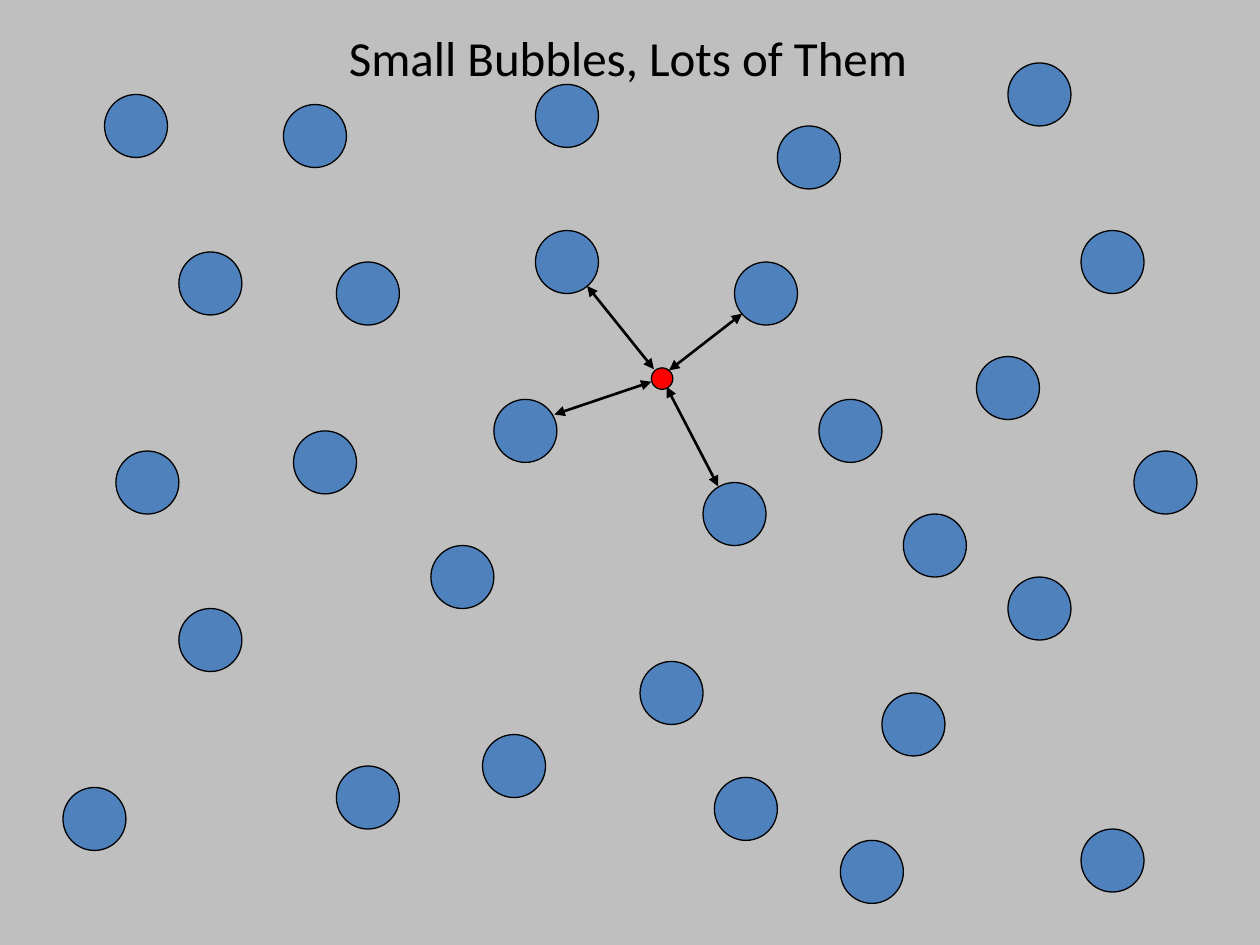
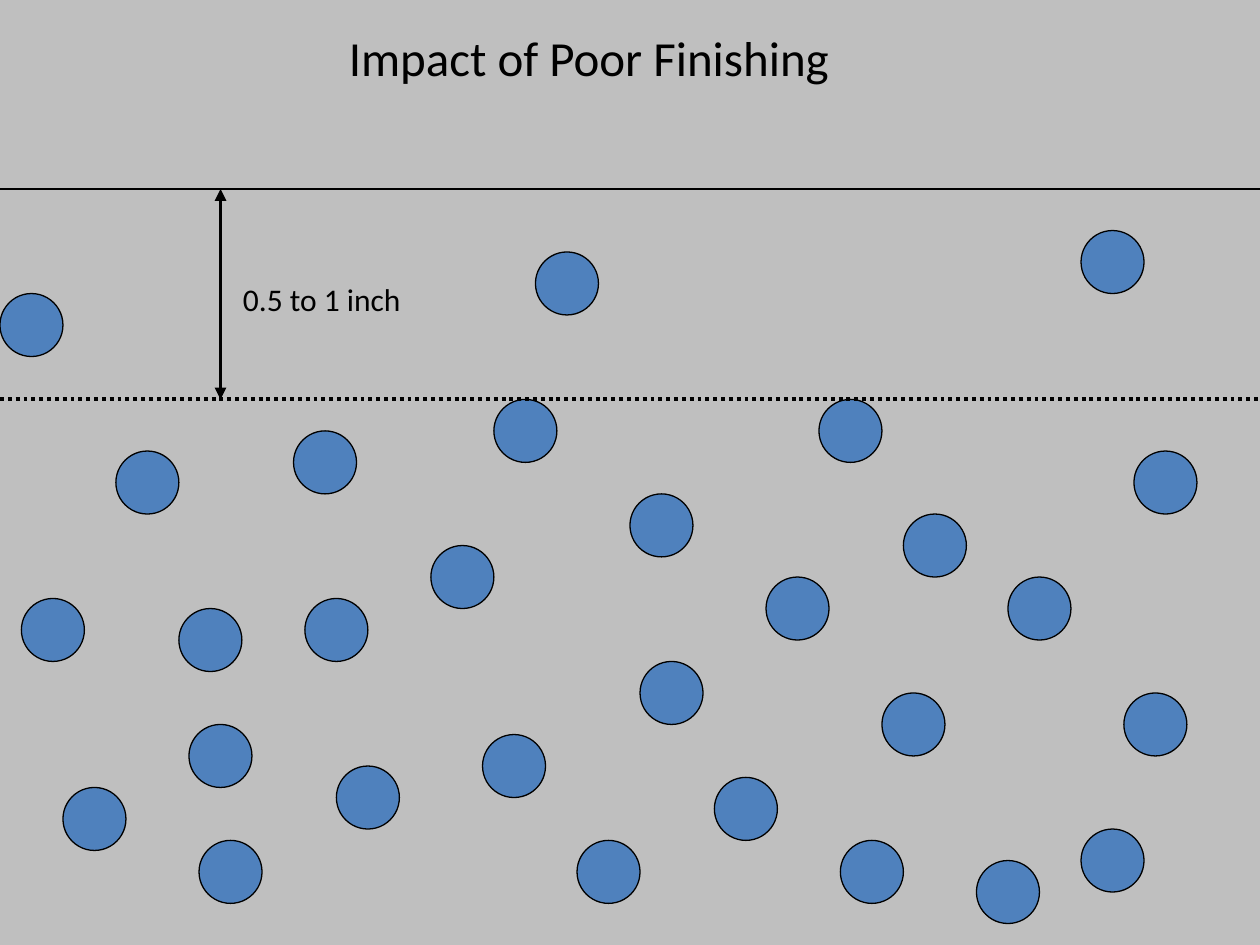
from dataclasses import dataclass

from lxml.etree import SubElement
from pptx import Presentation
from pptx.dml.color import RGBColor
from pptx.enum.dml import MSO_LINE
from pptx.enum.shapes import MSO_CONNECTOR, MSO_SHAPE
from pptx.enum.text import MSO_AUTO_SIZE, PP_ALIGN
from pptx.oxml.ns import qn
from pptx.presentation import Presentation as PresentationFile
from pptx.shapes.autoshape import Shape
from pptx.slide import Slide
from pptx.util import Inches, Pt


@dataclass(frozen=True)
class Theme:
    """Colours, font and sizes shared by the slides."""
    concrete: RGBColor = RGBColor(0xBF, 0xBF, 0xBF)
    bubble: RGBColor = RGBColor(0x4F, 0x81, 0xBD)
    water: RGBColor = RGBColor(0xFF, 0x00, 0x00)
    ink: RGBColor = RGBColor(0x00, 0x00, 0x00)
    font: str = "Calibri"
    title_size: float = 28
    label_size: float = 18
    outline: float = 0.75
    spacing_arrow: float = 1.5
    depth_line: float = 2.25


@dataclass(frozen=True)
class Line:
    """A straight line between two points in inches."""
    start: tuple[float, float]
    end: tuple[float, float]
    width: float
    arrows: bool = False
    dotted: bool = False


@dataclass(frozen=True)
class Label:
    """Text in a box, in inches and points."""
    text: str
    left: float
    top: float
    width: float
    height: float
    size: float
    wrap: bool = False


THEME = Theme()
SLIDE_WIDTH, SLIDE_HEIGHT = 10, 7.5
BUBBLE_SIZE, WATER_SIZE = 0.5, 0.17
SURFACE_Y, FINISHED_Y, DEPTH_X = 1.5, 3.17, 1.75

COMMON_BUBBLES = [
    (5.08, 5.25), (1.42, 4.83), (7, 5.5), (3.42, 4.33), (2.67, 6.08), (3.92, 3.17),
    (7.17, 4.08), (0.5, 6.25), (0.92, 3.58), (5.67, 6.17), (6.67, 6.67), (8, 4.58),
    (8.58, 6.58), (8.58, 1.83), (3.83, 5.83), (6.5, 3.17), (2.33, 3.42), (9, 3.58),
]
WELL_FINISHED_BUBBLES = [
    (5.83, 2.08), (2.67, 2.08), (0.83, 0.75), (1.42, 2), (4.25, 0.67), (5.58, 3.83),
    (8, 0.5), (6.17, 1), (7.75, 2.83), (2.25, 0.83), (4.25, 1.83),
]
POORLY_FINISHED_BUBBLES = [
    (5, 3.92), (4.25, 2), (0, 2.33), (2.42, 4.75), (8.92, 5.5), (6.08, 4.58),
    (1.58, 6.67), (4.58, 6.67), (7.75, 6.83), (0.17, 4.75), (1.5, 5.75),
]
SPACING_ARROWS = [
    Line(start, end, THEME.spacing_arrow, arrows=True)
    for start, end in [
        ((5.29, 3.07), (5.7, 3.86)),
        ((5.31, 2.94), (5.89, 2.49)),
        ((5.17, 3.03), (4.4, 3.29)),
        ((5.19, 2.93), (4.66, 2.27)),
    ]
]
DEPTH_LINES = [
    Line((0, SURFACE_Y), (SLIDE_WIDTH, SURFACE_Y), THEME.outline),
    Line((DEPTH_X, SURFACE_Y), (DEPTH_X, FINISHED_Y), THEME.depth_line, arrows=True),
    Line((0, FINISHED_Y), (SLIDE_WIDTH, FINISHED_Y), THEME.depth_line, dotted=True),
]


def add_filled(slide: Slide, kind: MSO_SHAPE, left: float, top: float,
               width: float, height: float, color: RGBColor) -> Shape:
    """Draw a filled shape without shadow or outline."""
    shape = slide.shapes.add_shape(
        kind, Inches(left), Inches(top), Inches(width), Inches(height))
    shape.shadow.inherit = False
    shape.fill.solid()
    shape.fill.fore_color.rgb = color
    shape.line.fill.background()
    return shape


def add_circle(slide: Slide, left: float, top: float, size: float, color: RGBColor) -> None:
    """Draw an outlined circle."""
    circle = add_filled(slide, MSO_SHAPE.OVAL, left, top, size, size, color)
    circle.line.color.rgb = THEME.ink
    circle.line.width = Pt(THEME.outline)


def add_line(slide: Slide, line: Line) -> None:
    """Draw a line, dotted or with arrowheads where asked."""
    connector = slide.shapes.add_connector(
        MSO_CONNECTOR.STRAIGHT, *(Inches(value) for value in line.start + line.end))
    connector.line.color.rgb = THEME.ink
    connector.line.width = Pt(line.width)
    if line.dotted:
        connector.line.dash_style = MSO_LINE.ROUND_DOT
    properties = connector.element.spPr
    if line.arrows:
        for tag in ("a:headEnd", "a:tailEnd"):
            SubElement(properties.find(qn("a:ln")), qn(tag), type="triangle")
    SubElement(properties, qn("a:effectLst"))


def add_label(slide: Slide, label: Label) -> None:
    """Write one line of text in a box."""
    box = slide.shapes.add_textbox(
        Inches(label.left), Inches(label.top), Inches(label.width), Inches(label.height))
    box.text_frame.word_wrap = label.wrap
    box.text_frame.auto_size = MSO_AUTO_SIZE.SHAPE_TO_FIT_TEXT
    paragraph = box.text_frame.paragraphs[0]
    paragraph.alignment = PP_ALIGN.LEFT
    run = paragraph.add_run()
    run.text = label.text
    run.font.name = THEME.font
    run.font.size = Pt(label.size)
    run.font.color.rgb = THEME.ink


def add_concrete_slide(presentation: PresentationFile, title: str, title_width: float,
                       bubbles: list[tuple[float, float]]) -> Slide:
    """Add a slide with concrete, air bubbles and a title."""
    slide = presentation.slides.add_slide(presentation.slide_layouts[6])
    add_filled(slide, MSO_SHAPE.RECTANGLE, 0, 0, SLIDE_WIDTH, SLIDE_HEIGHT, THEME.concrete)
    for left, top in COMMON_BUBBLES + bubbles:
        add_circle(slide, left, top, BUBBLE_SIZE, THEME.bubble)
    add_label(slide, Label(title, 2.67, 0.17, title_width, 0.57, THEME.title_size))
    return slide


def main() -> None:
    """Build and save both slides."""
    presentation = Presentation()
    presentation.slide_width = Inches(SLIDE_WIDTH)
    presentation.slide_height = Inches(SLIDE_HEIGHT)

    spacing_slide = add_concrete_slide(
        presentation, "Small Bubbles, Lots of Them", 5.09, WELL_FINISHED_BUBBLES)
    for arrow in SPACING_ARROWS:
        add_line(spacing_slide, arrow)
    add_circle(spacing_slide, 5.17, 2.92, WATER_SIZE, THEME.water)

    finishing_slide = add_concrete_slide(
        presentation, "Impact of Poor Finishing", 4.39, POORLY_FINISHED_BUBBLES)
    for line in DEPTH_LINES:
        add_line(finishing_slide, line)
    add_label(finishing_slide, Label(
        "0.5 to 1 inch", 1.83, 2.17, 1.92, 0.4, THEME.label_size, wrap=True))

    presentation.save("out.pptx")


if __name__ == "__main__":
    main()
